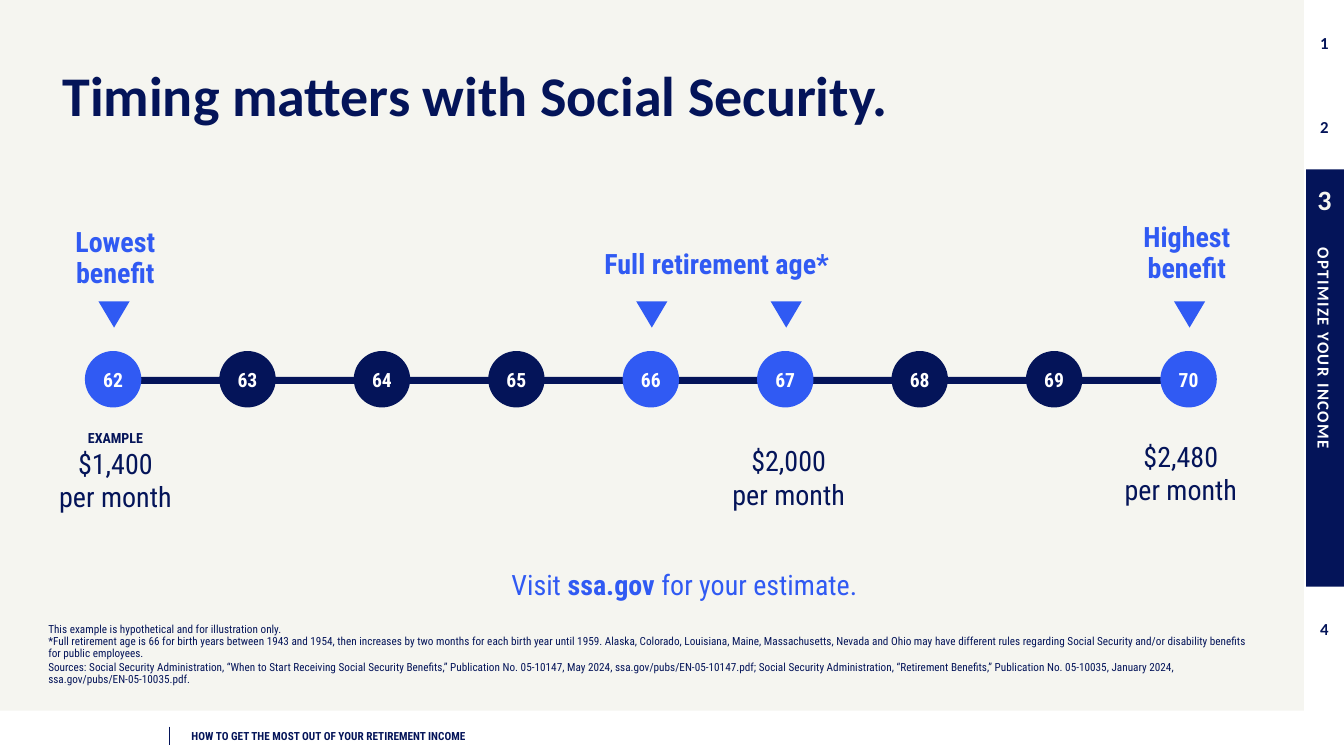
from lxml import etree
from pptx import Presentation
from pptx.dml.color import RGBColor
from pptx.enum.shapes import MSO_CONNECTOR, MSO_SHAPE
from pptx.enum.text import MSO_ANCHOR, MSO_AUTO_SIZE, PP_ALIGN
from pptx.oxml.ns import qn
from pptx.util import Pt

RECTANGLE, OVAL = MSO_SHAPE.RECTANGLE, MSO_SHAPE.OVAL
TRIANGLE = MSO_SHAPE.ISOSCELES_TRIANGLE
STRAIGHT = MSO_CONNECTOR.STRAIGHT
TOP, MIDDLE, BOTTOM = MSO_ANCHOR.TOP, MSO_ANCHOR.MIDDLE, MSO_ANCHOR.BOTTOM
LEFT, CENTER = PP_ALIGN.LEFT, PP_ALIGN.CENTER
COLORS = {"navy": "041459", "blue": "305AF3", "cream": "F5F5F0", "white": "FFFFFF"}
HEADING, BODY = "Calibri", "Roboto Condensed"

AGES = range(62, 71)
KEY_AGES = {62, 66, 67, 70}
FIRST_CENTER, AGE_STEP, LINE_CENTER = 80.8, 96.03, 270.9
CIRCLE_SIZE = 40.3
TABS = [
    ("3", 113, 58.3, 20, "navy", "cream"),
    ("2", 60.5, 60.5, 12, "white", "navy"),
    ("1", 0, 60.5, 12, "white", "navy"),
    ("4", 419, 60.5, 12, "white", "navy"),
]
FOOTNOTES = [
    "This example is hypothetical and for illustration only.",
    "*Full retirement age is 66 for birth years between 1943 and 1954, then increases by two "
    "months for each birth year until 1959. Alaska, Colorado, Louisiana, Maine, Massachusetts, "
    "Nevada and Ohio may have different rules regarding Social Security and/or disability "
    "benefits for public employees.",
    "Sources: Social Security Administration, “When to Start Receiving Social Security "
    "Benefits,” Publication No. 05-10147, May 2024, ssa.gov/pubs/EN-05-10147.pdf; Social "
    "Security Administration, “Retirement Benefits,” Publication No. 05-10035, January 2024, "
    "ssa.gov/pubs/EN-05-10035.pdf.",
]


def rgb(color):
    return RGBColor.from_string(COLORS[color])


def style(para, size, color, bold=False, font=BODY, align=CENTER, spacing=None, after=0):
    para.alignment = align
    para.line_spacing = spacing
    para.space_before, para.space_after = Pt(0), Pt(after)
    para.font.name, para.font.size, para.font.bold = font, Pt(size), bold
    para.font.color.rgb = rgb(color)


def add_block(page, kind, left, top, width, height, fill):
    block = page.shapes.add_shape(kind, Pt(left), Pt(top), Pt(width), Pt(height))
    block.shadow.inherit = False
    block.fill.solid()
    block.fill.fore_color.rgb = rgb(fill)
    block.line.fill.background()
    return block


def add_label(block, text, size, color, font=BODY, align=CENTER):
    frame = block.text_frame
    frame.vertical_anchor = MIDDLE
    frame.text = text
    style(frame.paragraphs[0], size, color, True, font, align)
    return frame


def add_text(page, left, top, width, height, lines, anchor=TOP):
    box = page.shapes.add_textbox(Pt(left), Pt(top), Pt(width), Pt(height))
    frame = box.text_frame
    frame.word_wrap = True
    frame.vertical_anchor = anchor
    frame.text = "\n".join(lines)
    return frame


def add_rule(page, x, top, bottom, color, width):
    rule = page.shapes.add_connector(STRAIGHT, Pt(x), Pt(top), Pt(x), Pt(bottom))
    rule.line.color.rgb = rgb(color)
    rule.line.width = Pt(width)
    etree.SubElement(rule._element.spPr, qn("a:effectLst"))


def add_footer(page):
    add_rule(page, 121, 519, 532, "navy", 1)
    frame = add_text(page, 136.8, 520.6, 499, 9.4,
                     ["HOW TO GET THE MOST OUT OF YOUR RETIREMENT INCOME"])
    frame.margin_left = frame.margin_top = frame.margin_right = frame.margin_bottom = 0
    style(frame.paragraphs[0], 8, "navy", True, align=LEFT)


def add_side_tabs(page):
    section = add_block(page, RECTANGLE, 932, 170, 28, 257, "navy")
    frame = add_label(section, "OPTIMIZE YOUR INCOME", 12, "white", HEADING, LEFT)
    frame._txBody.bodyPr.set("vert", "vert")
    frame.paragraphs[0].runs[0]._r.get_or_add_rPr().set("spc", "100")
    for number, top, height, size, fill, color in TABS:
        tab = add_block(page, RECTANGLE, 932, top, 28, height, fill)
        add_label(tab, number, size, color, HEADING)


def add_title(page):
    title = page.shapes.title
    title.element.getparent().append(title.element)
    title.left, title.top, title.width, title.height = Pt(37.4), Pt(45.4), Pt(811), Pt(46.8)
    frame = title.text_frame
    frame.text = "Timing matters with Social Security."
    frame.auto_size = MSO_AUTO_SIZE.NONE
    frame.vertical_anchor = TOP
    style(frame.paragraphs[0], 40, "navy", True, HEADING, LEFT, 0.9)


def add_timeline(page):
    add_block(page, RECTANGLE, 88.6, 269.3, 752.4, 5, "navy")
    for index, age in enumerate(AGES):
        center = FIRST_CENTER + index * AGE_STEP
        circle = add_block(page, OVAL, center - CIRCLE_SIZE / 2, LINE_CENTER - CIRCLE_SIZE / 2,
                           CIRCLE_SIZE, CIRCLE_SIZE, "blue" if age in KEY_AGES else "navy")
        frame = add_label(circle, str(age), 14, "white")
        frame.margin_left = frame.margin_right = 0
        if age in KEY_AGES:
            marker = add_block(page, TRIANGLE, center - 10.5, 215.2, 22.3, 18.8, "blue")
            marker.rotation = 180


def add_callout(page, left, top, width, text):
    frame = add_text(page, left, top, width, 25.2, [text])
    style(frame.paragraphs[0], 20, "blue", True, spacing=0.9)


def add_amount(page, left, top, width, lines):
    frame = add_text(page, left, top, width, 56, lines)
    *captions, amount = frame.paragraphs
    for caption in captions:
        style(caption, 10, "navy", True)
    style(amount, 20, "navy", after=6)


def add_invitation(page):
    frame = add_text(page, 355, 401.8, 267.8, 31.7, [""])
    frame.word_wrap = False
    para = frame.paragraphs[0]
    for text, bold in [("Visit ", False), ("ssa.gov", True), (" for your estimate.", False)]:
        span = para.add_run()
        span.text = text
        span.font.bold = bold
    style(para, 20, "blue")


def add_footnotes(page):
    frame = add_text(page, 27.4, 424.8, 881.3, 68.4, FOOTNOTES, BOTTOM)
    for para in frame.paragraphs:
        style(para, 8, "navy", align=LEFT, spacing=0.9, after=1)
    frame.paragraphs[0].space_after = Pt(0)


def main():
    deck = Presentation()
    deck.slide_width, deck.slide_height = Pt(960), Pt(540)
    page = deck.slides.add_slide(deck.slide_layouts[5])
    add_footer(page)
    add_side_tabs(page)
    add_block(page, RECTANGLE, 0, 0, 932, 507.6, "cream")
    add_rule(page, 932.4, 0, 540, "white", 1.5)
    add_title(page)
    add_timeline(page)
    add_callout(page, 19.4, 159.8, 126, "Lowest benefit")
    add_callout(page, 391, 175, 242, "Full retirement age*")
    add_callout(page, 784.8, 156.2, 126, "Highest benefit")
    add_amount(page, 6.5, 303.1, 152, ["EXAMPLE", "$1,400\vper month"])
    add_amount(page, 488.9, 313.2, 149, ["$2,000\vper month"])
    add_amount(page, 769, 310.3, 149, ["$2,480\vper month"])
    add_invitation(page)
    add_footnotes(page)
    deck.save("out.pptx")


if __name__ == "__main__":
    main()
